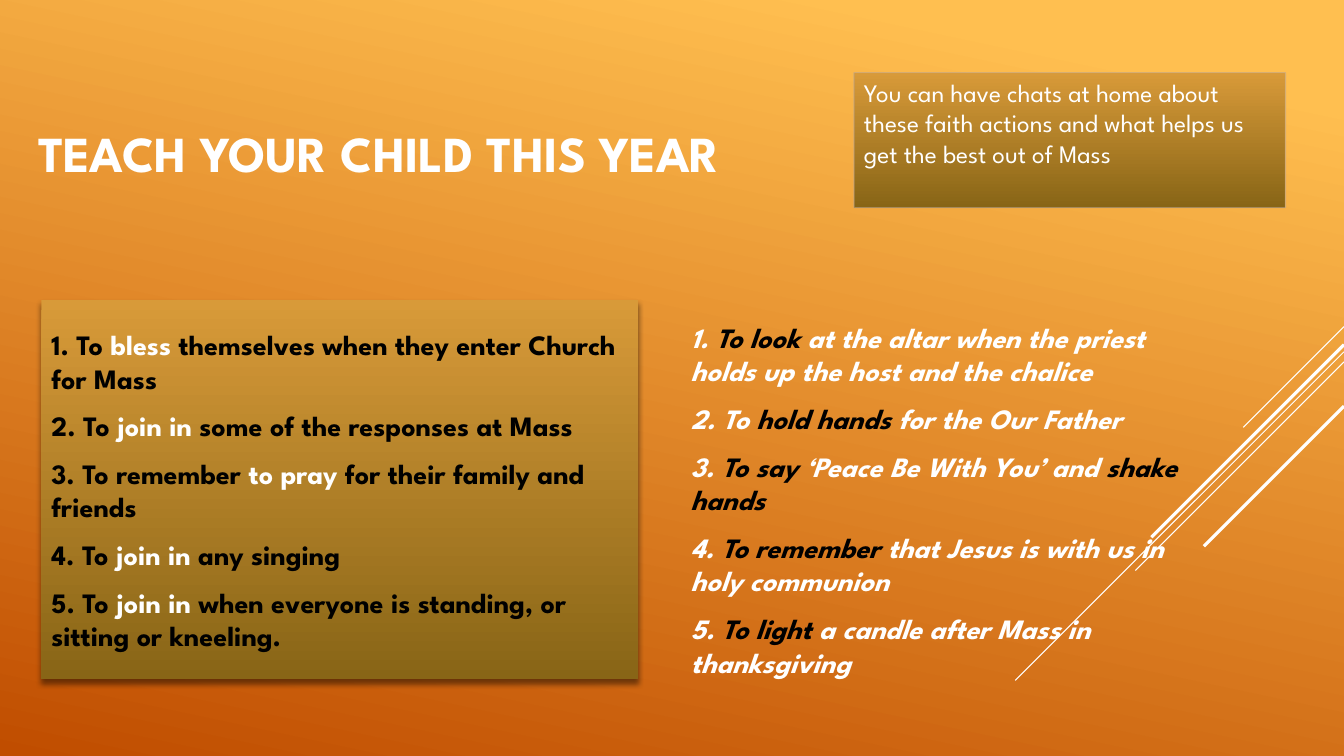
from lxml import etree
from pptx import Presentation
from pptx.dml.color import RGBColor
from pptx.enum.dml import MSO_LINE
from pptx.enum.shapes import MSO_CONNECTOR, MSO_SHAPE
from pptx.enum.text import MSO_ANCHOR, MSO_AUTO_SIZE, PP_ALIGN
from pptx.oxml.ns import qn
from pptx.util import Inches, Pt

LEFT, TOP, MIDDLE = PP_ALIGN.LEFT, MSO_ANCHOR.TOP, MSO_ANCHOR.MIDDLE
NO_FIT, SOLID = MSO_AUTO_SIZE.NONE, MSO_LINE.SOLID
STRAIGHT, BOX = MSO_CONNECTOR.STRAIGHT, MSO_SHAPE.RECTANGLE

FONT = "League Spartan"
WHITE, BLACK = "FFFFFF", "000000"
SKY = [(0.1, "FFBF50"), (1, "C04D00")]
GOLD = [(0, "D89A39"), (1, "886516")]
EDGE = 13.33

TITLE = "TEACH YOUR CHILD THIS YEAR"
NOTE = "You can have chats at home about these faith actions and what helps us get the best out of Mass"
ENTER = [
    "To |bless |themselves when they enter Church for Mass",
    "To |join in |some of the responses at Mass",
    "To remember |to pray |for their family and friends",
    "To |join in |any singing",
    "To |join in |when everyone is standing, or sitting or kneeling.",
]
ALTAR = [
    "|To look |at the altar when the priest holds up the host and the chalice",
    "To |hold hands |for the Our Father",
    "|To say |‘Peace Be With You’ and |shake hands",
    "|To remember |that Jesus is with us in holy communion",
    "|To light |a candle after Mass in thanksgiving",
]
RAYS = [
    (3.24, 1, 0.75),
    (3.49, 3.26, 0.75),
    (3.59, 2.07, 0.75),
    (3.42, 1.91, 2.25),
    (4.03, 1.39, 2.25),
]


def tint(code):
    return RGBColor.from_string(code)


def apply(target, form):
    for name, value in form.items():
        setattr(target, name, value)


def place(shape, *box):
    apply(shape, dict(zip(("left", "top", "width", "height"), map(Inches, box))))


def blend(fill, stops, angle):
    fill.gradient()
    fill.gradient_angle = 360 - angle
    for stop, (spot, code) in zip(fill.gradient_stops, stops):
        stop.position = spot
        stop.color.rgb = tint(code)


def add_node(parent, tag, **attrs):
    return etree.SubElement(parent, qn(tag), {k: str(v) for k, v in attrs.items()})


def write(para, parts, colors, **form):
    para.alignment = LEFT
    for i, words in enumerate(parts):
        if words:
            run = para.add_run()
            run.text = words
            apply(run.font, {"name": FONT, **form})
            run.font.color.rgb = tint(colors[i % len(colors)])


def fit(shape, anchor):
    apply(shape.text_frame, {"word_wrap": True, "auto_size": NO_FIT, "vertical_anchor": anchor})


def fill_list(shape, items, colors, slant):
    fit(shape, MIDDLE)
    frame = shape.text_frame
    for i, item in enumerate(items):
        para = frame.add_paragraph() if i else frame.paragraphs[0]
        para.space_after = Pt(6)
        parts = f"{i + 1}. {item}".split("|")
        write(para, parts, colors, size=Pt(20), bold=True, italic=slant)
        props = para._p.get_or_add_pPr()
        apply_flat = {"marL": "0", "indent": "0"}
        for name, value in apply_flat.items():
            props.set(name, value)
        add_node(props, "a:buNone")


def build():
    deck = Presentation()
    apply(deck, {"slide_width": Inches(EDGE), "slide_height": Inches(7.5)})
    slide = deck.slides.add_slide(deck.slide_layouts[3])
    blend(slide.background.fill, SKY, 102)
    title, enter, altar = slide.placeholders

    for top, span, width in RAYS:
        ends = map(Inches, (EDGE, top, EDGE - span, top + span))
        ray = slide.shapes.add_connector(STRAIGHT, *ends)
        ray.line.color.rgb = tint(WHITE)
        ray.line.width = Pt(width)
        add_node(ray.element.spPr, "a:effectLst")
        title.element.addprevious(ray.element)

    place(title, 0.28, 0.69, 7.72, 1.65)
    fit(title, MIDDLE)
    write(title.text_frame.paragraphs[0], [TITLE], [WHITE], size=Pt(36), bold=True)

    place(enter, 0.41, 2.98, 5.92, 3.76)
    blend(enter.fill, GOLD, 90)
    glow = add_node(enter.element.spPr, "a:effectLst")
    shade = add_node(glow, "a:outerShdw", blurRad=Pt(4), dist=Pt(3), dir=5400000, rotWithShape=0)
    add_node(add_node(shade, "a:srgbClr", val=BLACK), "a:alpha", val=46000)
    fill_list(enter, ENTER, [BLACK, WHITE], False)

    place(altar, 6.75, 2.98, 5.4, 3.95)
    fill_list(altar, ALTAR, [WHITE, BLACK], True)

    note = slide.shapes.add_shape(BOX, *map(Inches, (8.47, 0.72, 4.28, 1.34)))
    note.shadow.inherit = False
    blend(note.fill, GOLD, 90)
    note.line.color.rgb = tint("BCA48A")
    apply(note.line, {"width": Pt(0.75), "dash_style": SOLID})
    edge = note.element.spPr.find(qn("a:ln")).find(".//" + qn("a:srgbClr"))
    add_node(edge, "a:alpha", val=60000)
    fit(note, TOP)
    write(note.text_frame.paragraphs[0], [NOTE], [WHITE], size=Pt(18))

    deck.save("out.pptx")


if __name__ == "__main__":
    build()
